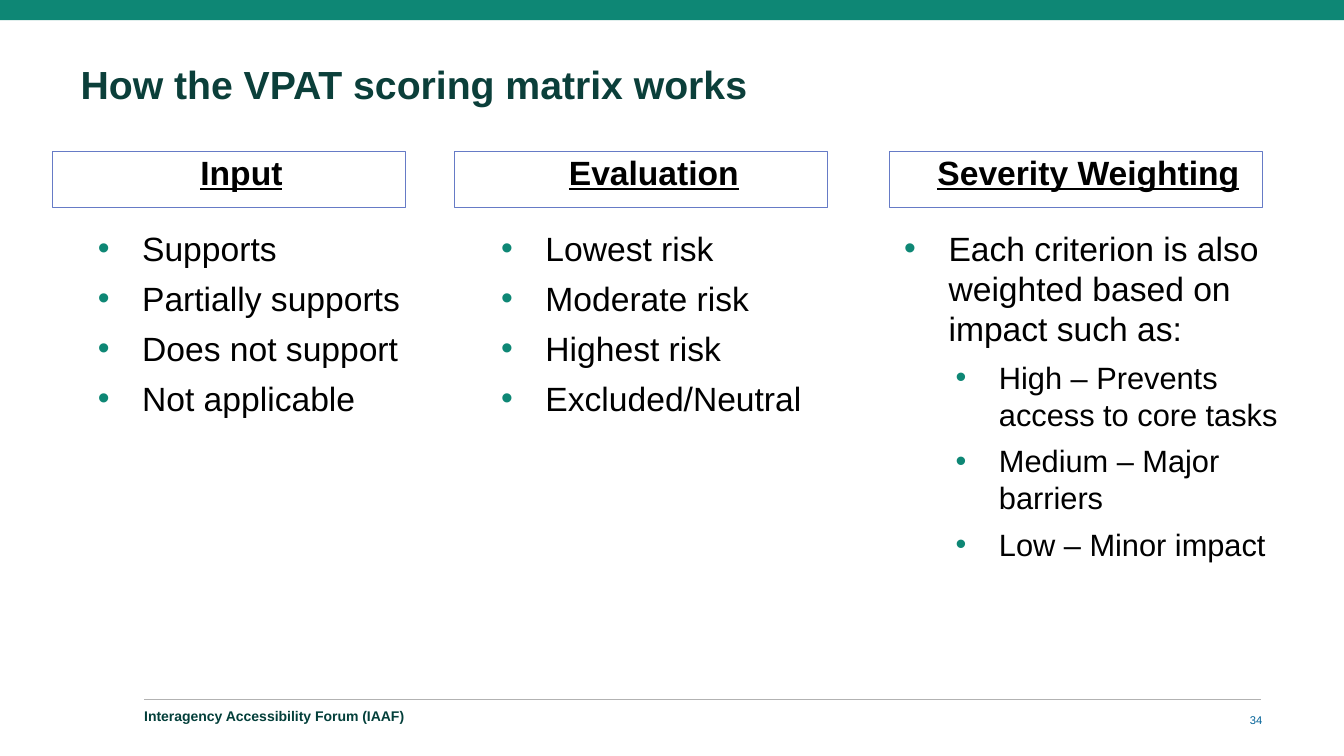
from dataclasses import dataclass

from lxml.etree import SubElement
from pptx import Presentation
from pptx.dml.color import RGBColor
from pptx.enum.shapes import MSO_CONNECTOR as Connector, MSO_SHAPE as Shape
from pptx.enum.text import MSO_ANCHOR as Anchor, MSO_AUTO_SIZE as AutoSize, PP_ALIGN as Align
from pptx.oxml.ns import qn
from pptx.util import Inches, Pt


@dataclass(frozen=True)
class Theme:
    font: str = "Arial"
    accent: str = "0E8775"
    heading: str = "0B3F3A"
    footer: str = "033F3A"
    number: str = "006197"
    ink: str = "000000"
    frame: str = "667BC6"
    rule: str = "B2B2B2"
    title_size: int = 28
    list_sizes: tuple = (24, 22)
    footer_size: int = 10
    number_size: int = 8
    gap: int = 7
    hairline: float = 0.75


THEME = Theme()
CELL = 0.1
LIST_LEFT, LIST_PITCH = 8.1, 40
HEADER_TOP, HEADER_HEIGHT = 15, 5.6
LIST_TOP, LIST_HEIGHT = 22.1, 43.2
FOOTER_TOP = 70.4

COLUMNS = [
    ("Input", 5.2, 35, 37,
     ["Supports", "Partially supports", "Does not support", "Not applicable"], []),
    ("Evaluation", 45.1, 37, 37,
     ["Lowest risk", "Moderate risk", "Highest risk", "Excluded/Neutral"], []),
    ("Severity Weighting", 88.2, 37, 43,
     ["Each criterion is also weighted based on impact such as:"],
     ["High – Prevents access to core tasks", "Medium – Major barriers", "Low – Minor impact"]),
]


def cells(count):
    return Inches(count * CELL)


def color(value):
    return RGBColor.from_string(value)


def write(para, text, size, ink, bold=False, underline=False, align=Align.LEFT,
          before=0, spacing=1.0, level=0, indent=(0, 0), bullet=None):
    para.level = level
    para.alignment = align
    para.space_before = Pt(before)
    para.space_after = Pt(0)
    para.line_spacing = spacing
    properties = para._p.get_or_add_pPr()
    properties.set("marL", str(Inches(indent[0])))
    properties.set("indent", str(Inches(indent[1])))
    if bullet:
        tint = SubElement(properties, qn("a:buClr"))
        SubElement(tint, qn("a:srgbClr"), val=bullet)
        SubElement(properties, qn("a:buFont"), typeface=THEME.font)
        SubElement(properties, qn("a:buChar"), char="•")
    else:
        SubElement(properties, qn("a:buNone"))
    span = para.add_run()
    span.text = text
    span.font.name = THEME.font
    span.font.size = Pt(size)
    span.font.bold = bold
    span.font.underline = underline
    span.font.color.rgb = color(ink)


class Page:
    def __init__(self, deck, theme):
        self.theme = theme
        self.slide = deck.slides.add_slide(deck.slide_layouts.get_by_name("Comparison"))
        holders = list(self.slide.placeholders)
        self.heading = holders[0]
        self.headers = holders[1::2]
        self.lists = holders[2::2]

    def place(self, holders, at, insets, anchor):
        if holders:
            box = holders.pop(0)
            box.left, box.top, box.width, box.height = map(cells, at)
        else:
            box = self.slide.shapes.add_textbox(*map(cells, at))
        frame = box.text_frame
        frame.word_wrap = True
        frame.auto_size = AutoSize.NONE
        frame.vertical_anchor = anchor
        (frame.margin_left, frame.margin_top,
         frame.margin_right, frame.margin_bottom) = map(Inches, insets)
        return box

    def band(self, *at):
        bar = self.slide.shapes.add_shape(Shape.RECTANGLE, *map(cells, at))
        bar.shadow.inherit = False
        bar.fill.solid()
        bar.fill.fore_color.rgb = color(self.theme.accent)
        bar.line.fill.background()

    def rule(self, *ends):
        line = self.slide.shapes.add_connector(Connector.STRAIGHT, *map(cells, ends))
        line.line.color.rgb = color(self.theme.rule)
        line.line.width = Pt(self.theme.hairline)
        SubElement(line._element.spPr, qn("a:effectLst"))

    def title(self, text, at):
        box = self.place([self.heading], at, (0, 0.05, 0, 0), Anchor.TOP)
        write(box.text_frame.paragraphs[0], text, self.theme.title_size,
              self.theme.heading, bold=True, spacing=0.9)

    def header(self, text, at):
        box = self.place(self.headers, at, (0.1, 0.05, 0.1, 0.2), Anchor.MIDDLE)
        box.line.color.rgb = color(self.theme.frame)
        box.line.width = Pt(self.theme.hairline)
        write(box.text_frame.paragraphs[0], text, self.theme.list_sizes[0], self.theme.ink,
              bold=True, underline=True, align=Align.CENTER, indent=(0.5, -0.25))

    def bullets(self, items, details, at):
        frame = self.place(self.lists, at, (0.1, 0.05, 0.1, 0.05), Anchor.TOP).text_frame
        entries = [(text, 0) for text in items] + [(text, 1) for text in details]
        for index, (text, level) in enumerate(entries):
            para = frame.add_paragraph() if index else frame.paragraphs[0]
            write(para, text, self.theme.list_sizes[level], self.theme.ink,
                  before=self.theme.gap if index else 0, level=level,
                  indent=((0.5, -0.44), (1, -0.43))[level], bullet=self.theme.accent)

    def label(self, text, at, **style):
        box = self.place([], at, (0, 0, 0, 0), Anchor.MIDDLE)
        write(box.text_frame.paragraphs[0], text, **style)


def main():
    deck = Presentation()
    deck.slide_width, deck.slide_height = Inches(13.33), Inches(7.5)
    page = Page(deck, THEME)
    page.band(0, 0, 133.3, 2)
    page.rule(14.3, 69.4, 125.1, 69.4)
    page.title("How the VPAT scoring matrix works", (8, 6, 117.3, 4.7))
    for index, (name, left, width, list_width, items, details) in enumerate(COLUMNS):
        page.header(name, (left, HEADER_TOP, width, HEADER_HEIGHT))
        page.bullets(items, details,
                     (LIST_LEFT + index * LIST_PITCH, LIST_TOP, list_width, LIST_HEIGHT))
    page.label("Interagency Accessibility Forum (IAAF)", (14.3, FOOTER_TOP, 70.1, 1.9),
               size=THEME.footer_size, ink=THEME.footer, bold=True, spacing=0.5)
    page.label("34", (119.4, FOOTER_TOP, 5.8, 2),
               size=THEME.number_size, ink=THEME.number, align=Align.RIGHT)
    deck.save("out.pptx")


if __name__ == "__main__":
    main()
